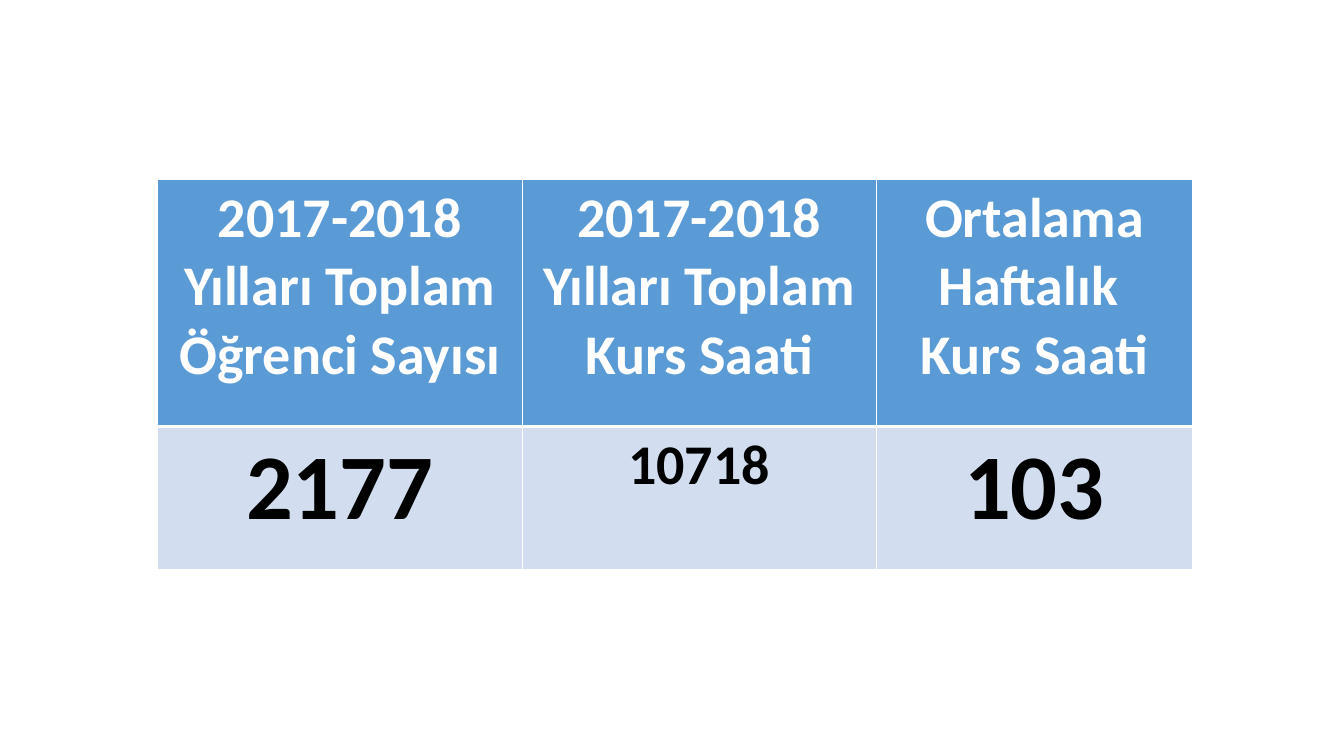
from dataclasses import dataclass

from lxml.etree import SubElement
from pptx import Presentation
from pptx.dml.color import RGBColor as RGB
from pptx.enum.text import PP_ALIGN as ALIGN
from pptx.oxml.ns import qn
from pptx.util import Inches, Pt


@dataclass(frozen=True)
class Theme:
    font: str = "Calibri"
    white: str = "FFFFFF"
    black: str = "000000"
    header_fill: str = "5B9BD5"
    body_fill: str = "D2DEEF"
    normal: int = 40
    large: int = 66
    thin: int = 1
    thick: int = 3


def write(tf, text, *, font, size, color, bold=True, align=ALIGN.CENTER):
    for i, line in enumerate(text.split("\n")):
        p = tf.add_paragraph() if i else tf.paragraphs[0]
        p.alignment = align
        r = p.add_run()
        r.text = line
        r.font.name = font
        r.font.size = Pt(size)
        r.font.bold = bold
        r.font.color.rgb = RGB.from_string(color)


class Deck:
    def __init__(self, theme):
        self.theme = theme
        self.prs = Presentation()
        self.prs.slide_width = Inches(13.33)
        self.prs.slide_height = Inches(7.5)
        self.s = self.prs.slides.add_slide(self.prs.slide_layouts[6])

    def borders(self, cell, **widths):
        tc_pr = cell._tc.get_or_add_tcPr()
        for side, width in widths.items():
            ln = SubElement(tc_pr, qn(f"a:ln{side}"), w=str(Pt(width)))
            fill = SubElement(ln, qn("a:solidFill"))
            SubElement(fill, qn("a:srgbClr"), val=self.theme.white)

    def cell(self, cell, text, *, fill, color, size, top, bottom):
        thin = self.theme.thin
        self.borders(cell, L=thin, R=thin, T=top, B=bottom)
        cell.fill.solid()
        cell.fill.fore_color.rgb = RGB.from_string(fill)
        write(cell.text_frame, text, font=self.theme.font, size=size, color=color)

    def table(self, left, top, widths, heights, headers, values):
        t = self.theme
        table = self.s.shapes.add_table(
            len(heights), len(widths), Inches(left), Inches(top),
            Inches(sum(widths)), Inches(sum(heights))).table
        for column, width in zip(table.columns, widths):
            column.width = Inches(width)
        for row, height in zip(table.rows, heights):
            row.height = Inches(height)
        for i, (header, (value, size)) in enumerate(zip(headers, values)):
            self.cell(table.cell(0, i), header, fill=t.header_fill, color=t.white,
                      size=t.normal, top=t.thin, bottom=t.thick)
            self.cell(table.cell(1, i), value, fill=t.body_fill, color=t.black,
                      size=size, top=t.thick, bottom=t.thin)


def main():
    theme = Theme()
    deck = Deck(theme)
    deck.table(
        1.56, 1.78, [3.62, 3.51, 3.14], [2.45, 1.42],
        ["2017-2018 Yılları Toplam Öğrenci Sayısı",
         "2017-2018 Yılları Toplam\nKurs Saati",
         "Ortalama Haftalık \nKurs Saati"],
        [("2177", theme.large), ("10718", theme.normal), ("103", theme.large)])
    deck.prs.save("out.pptx")


if __name__ == "__main__":
    main()
